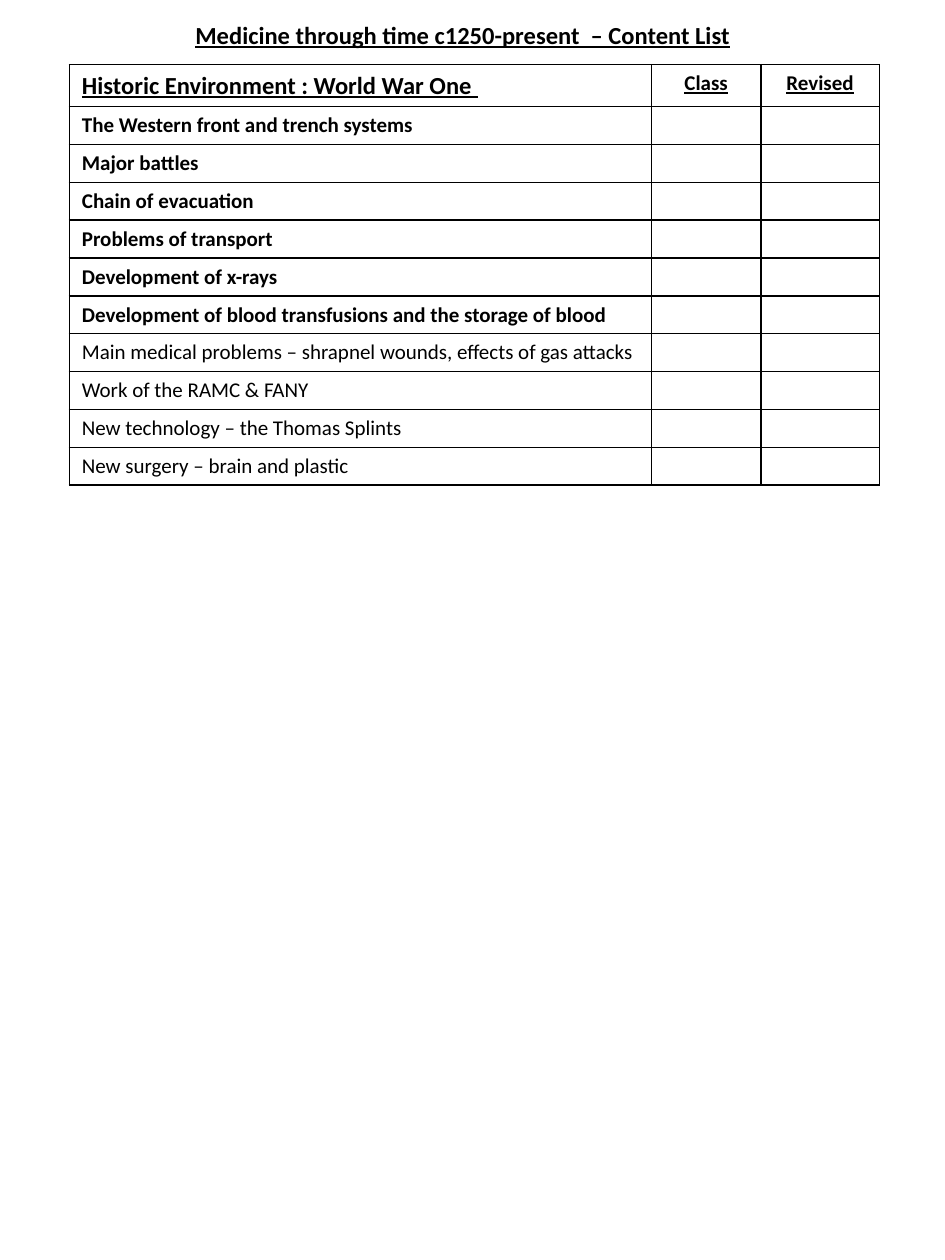
import pptx
import pptx.dml.color
import pptx.enum.text
import pptx.oxml
import pptx.oxml.ns
import pptx.util
from lxml import etree

Pt = pptx.util.Pt
ALIGN = pptx.enum.text.PP_ALIGN
FONT = "Calibri"
BLACK = "000000"

TITLE = "Medicine through time c1250-present  – Content List"
HEADINGS = ["Historic Environment : World War One ", "Class", "Revised"]
KEY_TOPICS = [
    "The Western front and trench systems",
    "Major battles",
    "Chain of evacuation",
    "Problems of transport",
    "Development of x-rays",
    "Development of blood transfusions and the storage of blood",
]
OTHER_TOPICS = [
    "Main medical problems – shrapnel wounds, effects of gas attacks",
    "Work of the RAMC & FANY",
    "New technology – the Thomas Splints",
    "New surgery – brain and plastic",
]

TITLE_BOX = (104.4, 7.9, 322.6, 24.5)
TABLE_LEFT, TABLE_TOP = 39.6, 36.9
COLUMN_WIDTHS = [332.6, 62.6, 67.7]
HEADER_HEIGHT, ROW_HEIGHT = 23.9, 21.6
BODY_SIZE, HEADING_SIZE = 12, 14


def color(hex_code):
    return pptx.dml.color.RGBColor.from_string(hex_code)


def write(text_frame, text, size=BODY_SIZE, bold=False, underline=False, align=ALIGN.LEFT):
    paragraph = text_frame.paragraphs[0]
    paragraph.alignment = align
    run = paragraph.add_run()
    run.text = text
    run.font.name = FONT
    run.font.size = Pt(size)
    run.font.bold = bold
    run.font.underline = underline
    run.font.color.rgb = color(BLACK)


def size_empty(cell):
    """Set the text size of a blank cell, so that its row stays low."""
    paragraph = cell.text_frame.paragraphs[0]
    end = etree.SubElement(paragraph._p, pptx.oxml.ns.qn("a:endParaRPr"))
    end.set("sz", str(BODY_SIZE * 100))


def style_cell(cell):
    """Clear the fill and draw a thin line on all four sides."""
    cell.fill.background()
    properties = cell._tc.get_or_add_tcPr()
    for index, side in enumerate(("lnL", "lnR", "lnT", "lnB")):
        line = pptx.oxml.parse_xml(
            f'<a:{side} {pptx.oxml.ns.nsdecls("a")} w="{Pt(1)}">'
            f'<a:solidFill><a:srgbClr val="{BLACK}"/></a:solidFill></a:{side}>'
        )
        properties.insert(index, line)


def add_title(slide):
    title = slide.shapes.title
    title.left, title.top, title.width, title.height = map(Pt, TITLE_BOX)
    frame = title.text_frame
    frame.word_wrap = False
    frame.auto_size = pptx.enum.text.MSO_AUTO_SIZE.SHAPE_TO_FIT_TEXT
    frame.vertical_anchor = pptx.enum.text.MSO_ANCHOR.TOP
    write(frame, TITLE, size=HEADING_SIZE, bold=True, underline=True)


def add_checklist(slide):
    topics = KEY_TOPICS + OTHER_TOPICS
    heights = [HEADER_HEIGHT] + [ROW_HEIGHT] * len(topics)
    table = slide.shapes.add_table(
        len(heights), len(COLUMN_WIDTHS), Pt(TABLE_LEFT), Pt(TABLE_TOP),
        Pt(sum(COLUMN_WIDTHS)), Pt(sum(heights)),
    ).table
    table.first_row = table.horz_banding = False
    for column, width in zip(table.columns, COLUMN_WIDTHS):
        column.width = Pt(width)
    for row, height in zip(table.rows, heights):
        row.height = Pt(height)

    for index, heading in enumerate(HEADINGS):
        write(table.cell(0, index).text_frame, heading, bold=True, underline=True,
              size=BODY_SIZE if index else HEADING_SIZE,
              align=ALIGN.CENTER if index else ALIGN.LEFT)
    for index, topic in enumerate(topics, start=1):
        write(table.cell(index, 0).text_frame, topic, bold=topic in KEY_TOPICS)
    for cell in table.iter_cells():
        style_cell(cell)
        if not cell.text_frame.text:
            size_empty(cell)


def main():
    presentation = pptx.Presentation()
    presentation.slide_width, presentation.slide_height = Pt(540), Pt(720)
    slide = presentation.slides.add_slide(presentation.slide_layouts[5])
    add_title(slide)
    add_checklist(slide)
    presentation.save("out.pptx")


if __name__ == "__main__":
    main()
